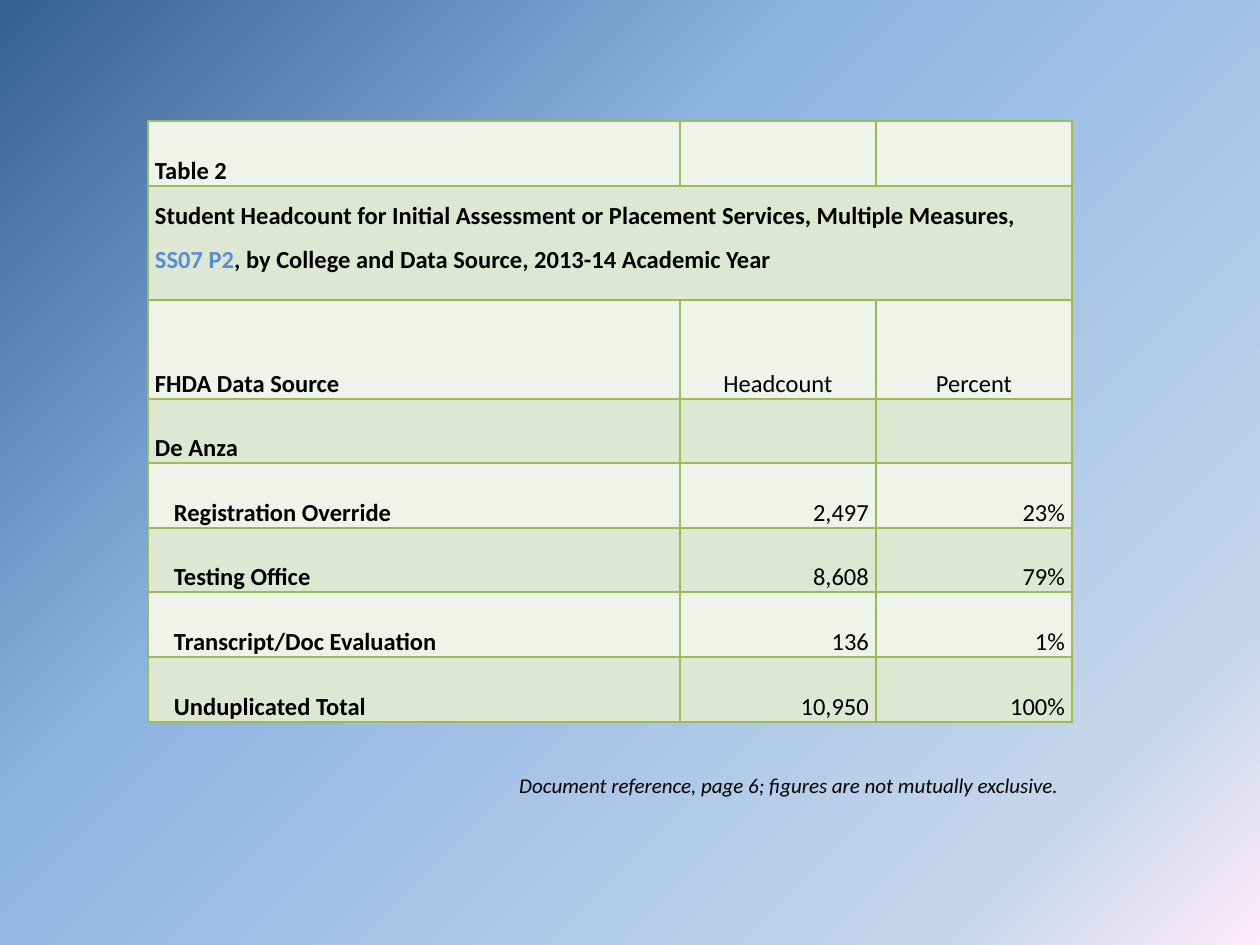
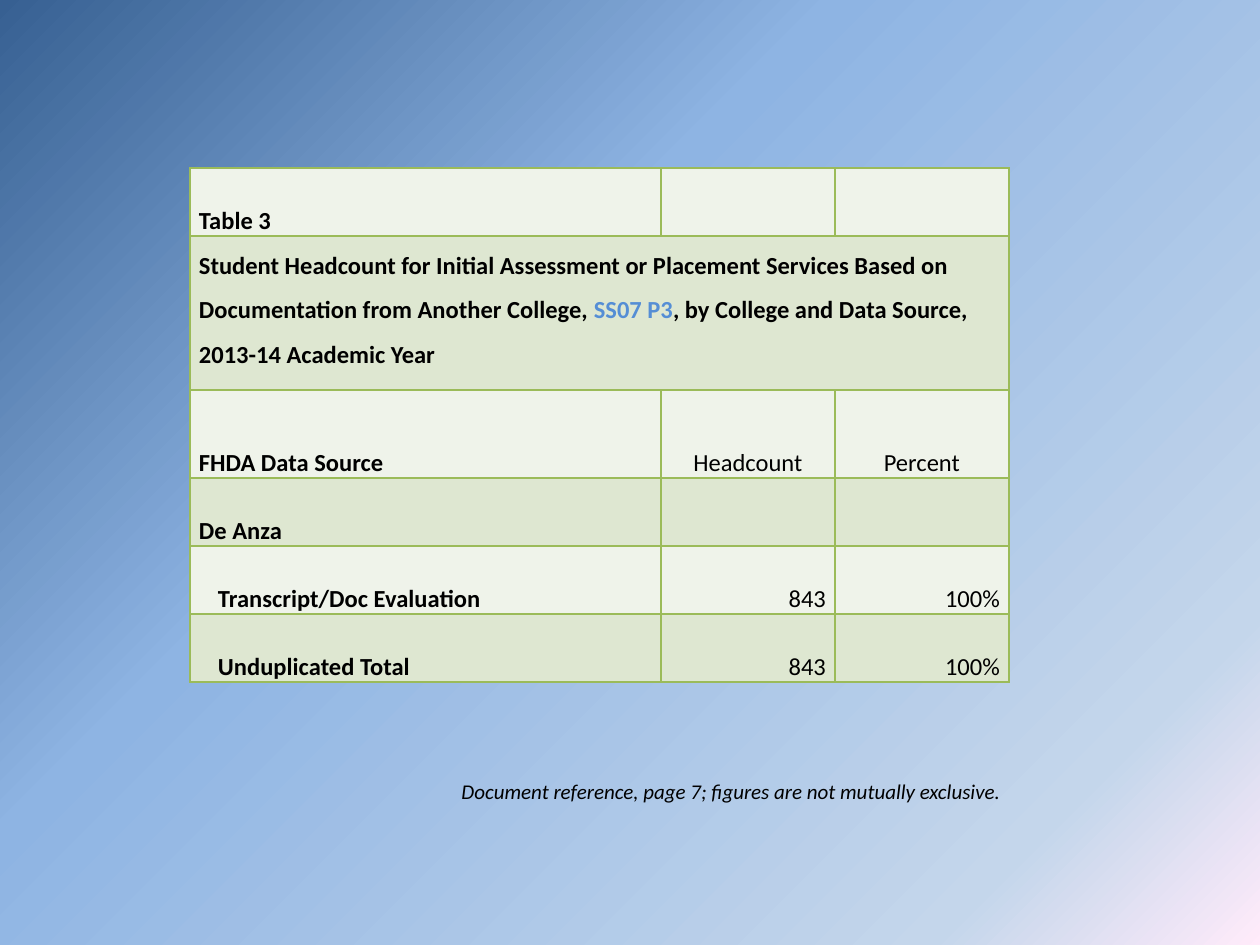
"""Build two headcount table slides on a shared gradient background."""
from lxml import etree
from pptx import Presentation, util as u
from pptx.dml.color import RGBColor
from pptx.enum import text
from pptx.oxml import parse_xml
from pptx.oxml.ns import nsdecls, qn

PX = 914400 / 126
FONT, INK, BLUE, LINE = "Calibri", "000000", "558ED5", "9BBB59"
BANDS = ("EFF3EA", "DEE7D1")
STOPS = ((0, "376092"), (38, "8EB4E3"), (85, "C4D6EB"), (100, "FFEBFA"))
INDENT = 19
LEFT, MID, RIGHT = (text.PP_ALIGN.LEFT, text.PP_ALIGN.CENTER, text.PP_ALIGN.RIGHT)
HEAD = ("FHDA Data Source", "Headcount", "Percent")
TAIL = ", by College and Data Source, 2013-14 Academic Year"

SLIDES = (
    dict(
        name="Table 2",
        title=("Student Headcount for Initial Assessment or Placement Services, "
               "Multiple Measures, ", "SS07 P2", TAIL),
        data=(("Registration Override", "2,497", "23%"),
              ("Testing Office", "8,608", "79%"),
              ("Transcript/Doc Evaluation", "136", "1%"),
              ("Unduplicated Total", "10,950", "100%")),
        at=(148, 121), cols=(532, 196, 196), pad=7,
        rows=(65, 114, 99, 64, 65, 64, 65, 65),
        note="Document reference, page 6; figures are not mutually exclusive.",
        box=(399, 766, 672, 38),
    ),
    dict(
        name="Table 3",
        title=("Student Headcount for Initial Assessment or Placement Services "
               "Based on Documentation from Another College, ", "SS07 P3", TAIL),
        data=(("Transcript/Doc Evaluation", "843", "100%"),
              ("Unduplicated Total", "843", "100%")),
        at=(190, 168), cols=(471, 174, 174), pad=9,
        rows=(68, 154, 88, 68, 68, 68),
        note="Document reference, page 7; figures are not mutually exclusive. ",
        box=(388, 772, 630, 38),
    ),
)


def px(n):
    return u.Emu(round(n * PX))


def rgb(code):
    return RGBColor.from_string(code)


def add_run(para, words, size=14, color=INK, bold=False, italic=False):
    run = para.add_run()
    run.text = words
    font = run.font
    font.name, font.size, font.bold, font.italic = FONT, u.Pt(size), bold, italic
    font.color.rgb = rgb(color)


def paint_back(master):
    fill = master.background.fill
    fill.gradient()
    fill.gradient_angle = 315
    stops = next(master.element.iter(qn("a:gsLst")))
    for old in list(stops):
        stops.remove(old)
    for pos, color in STOPS:
        stop = etree.SubElement(stops, qn("a:gs"), pos=str(pos * 1000))
        etree.SubElement(stop, qn("a:srgbClr"), val=color)


def style_cell(cell, color, pad):
    props = cell._tc.get_or_add_tcPr()
    for side in "LRTB":
        props.append(parse_xml(
            f'<a:ln{side} {nsdecls("a")} w="12700"><a:solidFill>'
            f'<a:srgbClr val="{LINE}"/></a:solidFill></a:ln{side}>'))
    cell.fill.solid()
    cell.fill.fore_color.rgb = rgb(color)
    cell.margin_left = cell.margin_right = px(pad)
    cell.margin_top = cell.margin_bottom = 0
    cell.vertical_anchor = text.MSO_ANCHOR.BOTTOM


def add_grid(slide, item):
    cols, rows = item["cols"], item["rows"]
    spot = [px(n) for n in (*item["at"], sum(cols), sum(rows))]
    table = slide.shapes.add_table(len(rows), len(cols), *spot).table
    table.first_row = table.horz_banding = False
    for col, wide in zip(table.columns, cols):
        col.width = px(wide)
    for row, high in zip(table.rows, rows):
        row.height = px(high)

    lines = [(item["name"],), item["title"], HEAD, ("De Anza",), *item["data"]]
    for r, line in enumerate(lines):
        for c in range(len(cols)):
            style_cell(table.cell(r, c), BANDS[r % 2], item["pad"])
        if r == 1:
            cell = table.cell(r, 0)
            cell.merge(table.cell(r, len(cols) - 1))
            cell.vertical_anchor = text.MSO_ANCHOR.TOP
            para = cell.text_frame.paragraphs[0]
            para.line_spacing = 1.5
            for words, color in zip(line, (INK, BLUE, INK)):
                add_run(para, words, color=color, bold=True)
            continue
        for c, words in enumerate(line):
            para = table.cell(r, c).text_frame.paragraphs[0]
            para.line_spacing = 1.5
            para.alignment = LEFT if c == 0 else MID if r == 2 else RIGHT
            if c == 0 and r > 3:
                para._p.get_or_add_pPr().set("indent", str(px(INDENT)))
            add_run(para, words, bold=c == 0)


def add_note(slide, item):
    frame = slide.shapes.add_textbox(*map(px, item["box"])).text_frame
    frame.word_wrap = True
    frame.auto_size = text.MSO_AUTO_SIZE.SHAPE_TO_FIT_TEXT
    para = frame.paragraphs[0]
    para.alignment = RIGHT
    add_run(para, item["note"], size=12, italic=True)


def main():
    deck = Presentation()
    deck.slide_width, deck.slide_height = px(1260), px(945)
    paint_back(deck.slide_master)
    for item in SLIDES:
        slide = deck.slides.add_slide(deck.slide_layouts[6])
        add_grid(slide, item)
        add_note(slide, item)
    deck.save("out.pptx")


if __name__ == "__main__":
    main()
